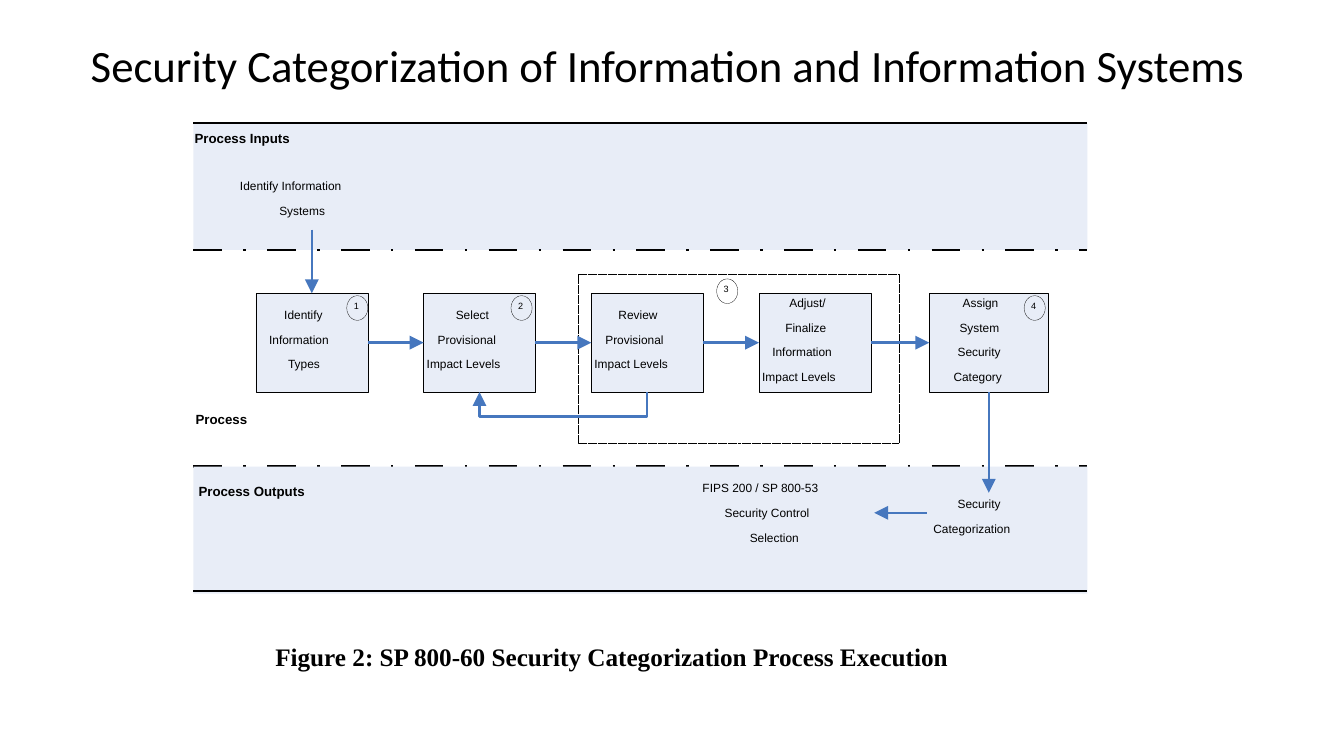
from lxml import etree
from pptx import Presentation
from pptx.dml.color import RGBColor
from pptx.enum.dml import MSO_LINE
from pptx.enum.shapes import MSO_CONNECTOR, MSO_SHAPE
from pptx.enum.text import MSO_ANCHOR, MSO_AUTO_SIZE, PP_ALIGN
from pptx.oxml.ns import qn
from pptx.util import Pt

RECTANGLE, OVAL = MSO_SHAPE.RECTANGLE, MSO_SHAPE.OVAL
STRAIGHT = MSO_CONNECTOR.STRAIGHT
FINE_DASH = MSO_LINE.SQUARE_DOT
TOP, MIDDLE = MSO_ANCHOR.TOP, MSO_ANCHOR.MIDDLE
LEFT, CENTER = PP_ALIGN.LEFT, PP_ALIGN.CENTER
NO_AUTOFIT = MSO_AUTO_SIZE.NONE

COLORS = {"ink": "000000", "panel": "E8EDF7", "flow": "4677BE"}
BAND_LEFT, BAND_WIDTH, BAND_HEIGHT = 138.2, 638.6, 90.7
STEP_LEFT, STEP_PITCH, STEP_TOP, STEP_HEIGHT = 182.8, 119.8, 209.5, 70.6
HAIRLINE, STROKE = 0.19, 1.7

STEPS = [
    (STEP_LEFT, 79.9, 9.4, [(20.2, "Identify"), (9.4, "Information"), (23, "Types")]),
    (STEP_LEFT + STEP_PITCH, 79.9, 9.4,
     [(23, "Select"), (10, "Provisional"), (2.2, "Impact Levels")]),
    (STEP_LEFT + 2 * STEP_PITCH, 79.9, 9.4,
     [(19.4, "Review"), (10, "Provisional"), (2.2, "Impact Levels")]),
    (STEP_LEFT + 3 * STEP_PITCH, 79.9, 0.7,
     [(21.6, "Adjust/"), (18.7, "Finalize"), (9.4, "Information"), (2.2, "Impact Levels")]),
    (663.8, 85, 0.7,
     [(23.8, "Assign"), (21.6, "System"), (20.2, "Security"), (17.3, "Category")]),
]
HEADINGS = [(139, 92.2, "Process Inputs"), (139.7, 293, "Process"),
            (141.8, 344.2, "Process Outputs")]
NOTES = [
    (171.4, 126.7, [(0, "Identify Information"), (28.1, "Systems")]),
    (666.7, 354.2, [(17.3, "Security"), (0, "Categorization")]),
    (501.8, 342.7, [(0, "FIPS 200 / SP 800-53"), (15.8, "Security Control"),
                    (33.8, "Selection")]),
]
BADGES = [(247.7, 211.2), (365, 211.2), (511.9, 199.2), (731.5, 211.2)]


def color(name):
    return RGBColor.from_string(COLORS[name])


def write(frame, lines, size, bold=False, font="Arial", align=LEFT, inset=(0, 0)):
    frame.word_wrap = True
    frame.auto_size = NO_AUTOFIT
    frame.vertical_anchor = TOP
    frame.margin_left, frame.margin_top = Pt(inset[0]), Pt(inset[1])
    frame.margin_right = frame.margin_bottom = 0
    for index, (indent, text) in enumerate(lines):
        paragraph = frame.add_paragraph() if index else frame.paragraphs[0]
        paragraph.alignment = align
        paragraph.line_spacing = 1.07
        paragraph.space_after = Pt(6.8)
        paragraph._p.get_or_add_pPr().set("marL", str(Pt(indent)))
        run = paragraph.add_run()
        run.text = text
        run.font.name, run.font.size, run.font.bold = font, Pt(size), bold
        run.font.color.rgb = color("ink")


def add_label(slide, left, top, width, height, lines, size, **style):
    label = slide.shapes.add_textbox(Pt(left), Pt(top), Pt(width), Pt(height))
    write(label.text_frame, lines, size, **style)


def add_panel(slide, kind, left, top, width, height, fill=None, outline=False):
    panel = slide.shapes.add_shape(kind, Pt(left), Pt(top), Pt(width), Pt(height))
    panel.shadow.inherit = False
    if fill:
        panel.fill.solid()
        panel.fill.fore_color.rgb = color(fill)
    else:
        panel.fill.background()
    if outline:
        panel.line.color.rgb = color("ink")
        panel.line.width = Pt(HAIRLINE)
    else:
        panel.line.fill.background()
    return panel


def add_line(slide, start, end, ink):
    line = slide.shapes.add_connector(STRAIGHT, *(Pt(n) for n in (*start, *end)))
    line.line.color.rgb = color(ink)
    line.line.width = Pt(STROKE)
    etree.SubElement(line._element.spPr, qn("a:effectLst"))
    return line


def add_arrowhead(shape):
    etree.SubElement(shape.line._get_or_add_ln(), qn("a:tailEnd"),
                     type="triangle", w="lg", len="lg")


def add_arrow(slide, start, end, source=None, target=None):
    arrow = add_line(slide, start, end, "flow")
    if source:
        arrow.begin_connect(*source)
    if target:
        arrow.end_connect(*target)
    add_arrowhead(arrow)


def add_border(slide, top, dashed=False):
    border = add_line(slide, (BAND_LEFT, top), (BAND_LEFT + BAND_WIDTH, top), "ink")
    if dashed:
        pattern = etree.SubElement(border.line._get_or_add_ln(), qn("a:custDash"))
        for dash in ("1200000", "100000"):
            etree.SubElement(pattern, qn("a:ds"), d=dash, sp="900000")


def add_return_path(slide, points):
    corners = [(Pt(x), Pt(y)) for x, y in points]
    builder = slide.shapes.build_freeform(*corners[0])
    builder.add_line_segments(corners[1:], close=False)
    route = builder.convert_to_shape()
    route.shadow.inherit = False
    route.fill.background()
    route.line.color.rgb = color("flow")
    route.line.width = Pt(STROKE)
    add_arrowhead(route)


def add_step(slide, left, width, inset, lines):
    step = add_panel(slide, RECTANGLE, left, STEP_TOP, width, STEP_HEIGHT, "panel", True)
    write(step.text_frame, lines, 8.5, inset=(0, inset))
    return step


def add_title(slide, text):
    title = slide.shapes.title
    title.left, title.top, title.width, title.height = Pt(57.6), Pt(23), Pt(848), Pt(46)
    frame = title.text_frame
    frame.word_wrap = False
    frame.auto_size = NO_AUTOFIT
    frame.vertical_anchor = MIDDLE
    frame.paragraphs[0].alignment = LEFT
    run = frame.paragraphs[0].add_run()
    run.text = text
    run.font.name, run.font.size = "Calibri", Pt(32)
    run.font.color.rgb = color("ink")


def main():
    deck = Presentation()
    deck.slide_width, deck.slide_height = Pt(960), Pt(540)
    slide = deck.slides.add_slide(deck.slide_layouts[5])
    add_title(slide, "Security Categorization of Information and Information Systems")

    add_panel(slide, RECTANGLE, BAND_LEFT, 87.8, BAND_WIDTH, BAND_HEIGHT, "panel")
    add_border(slide, 87.8)
    add_border(slide, 178.6, dashed=True)
    add_border(slide, 333.2, dashed=True)
    add_panel(slide, RECTANGLE, BAND_LEFT, 333.4, BAND_WIDTH, BAND_HEIGHT, "panel")
    add_border(slide, 422)

    steps = [add_step(slide, *step) for step in STEPS]
    review_group = add_panel(slide, RECTANGLE, 412.6, 195.8, 229.7, 121, outline=True)
    review_group.line.dash_style = FINE_DASH

    middle, bottom = STEP_TOP + STEP_HEIGHT / 2, STEP_TOP + STEP_HEIGHT
    for index in range(len(steps) - 1):
        left, width = STEPS[index][:2]
        add_arrow(slide, (left + width, middle), (STEPS[index + 1][0], middle),
                  (steps[index], 3), (steps[index + 1], 1))
    centers = [left + width / 2 for left, width, *_ in STEPS]
    add_arrow(slide, (centers[0], 164), (centers[0], STEP_TOP), target=(steps[0], 0))
    add_arrow(slide, (centers[4], bottom), (centers[4], 352), source=(steps[4], 2))
    add_arrow(slide, (662, 366.3), (624.4, 366.3))
    add_return_path(slide, [(centers[2], bottom), (centers[2], 297.5),
                            (centers[1], 297.5), (centers[1], bottom)])

    for number, (left, top) in enumerate(BADGES, 1):
        badge = add_panel(slide, OVAL, left, top, 15.1, 17.6, outline=True)
        write(badge.text_frame, [(0, str(number))], 6.5, inset=(2.8, 0))
    for left, top, text in HEADINGS:
        add_label(slide, left, top, 140, 23, [(0, text)], 9.5, bold=True)
    for left, top, lines in NOTES:
        add_label(slide, left, top, 110, 17.3 * len(lines), lines, 8.5)
    add_label(slide, 143.6, 452.9, 586.8, 31,
              [(0, "Figure 2: SP 800-60 Security Categorization Process Execution")],
              18, bold=True, font="Times New Roman", align=CENTER, inset=(0, 3.6))
    deck.save("out.pptx")


if __name__ == "__main__":
    main()
